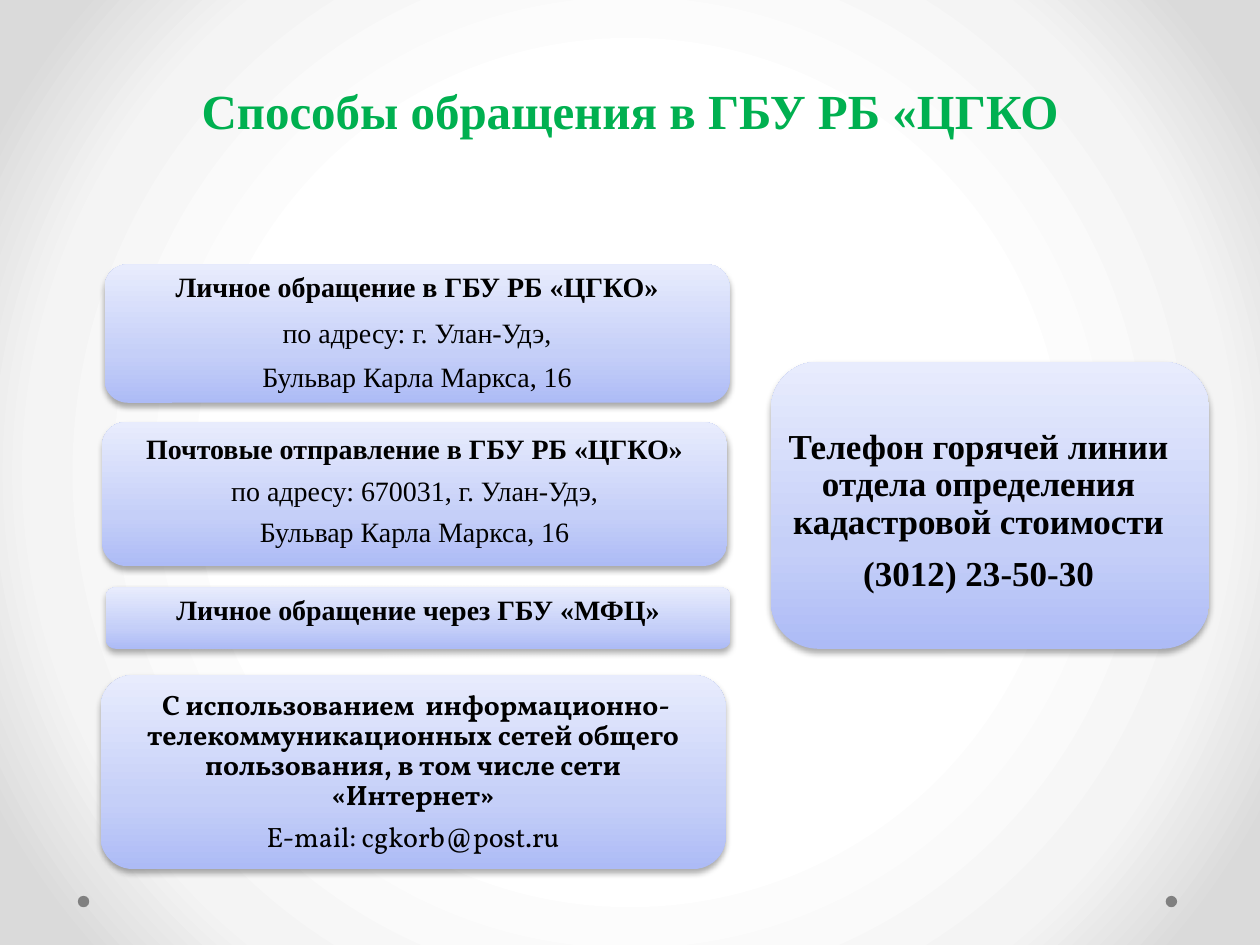
from lxml.etree import fromstring
from pptx import Presentation
from pptx.dml.color import RGBColor as Rgb
from pptx.enum.shapes import MSO_SHAPE as Shape
from pptx.enum.text import MSO_ANCHOR as Anchor, PP_ALIGN as Align
from pptx.oxml.ns import nsdecls
from pptx.util import Cm, Pt

COLORS = {
    "title": "00B050", "text": "000000", "dot": "808080", "shadow": "000000",
    "center": "FFFFFF", "ring": "F4F4F4", "edge": "DADADA",
    "box_bottom": "ADBBF6", "box_middle": "C5CFF8", "box_top": "E8ECFD",
}
SERIF = "Times New Roman"


def gradient(stops, direction):
    stop_list = "".join(
        f'<a:gs pos="{position * 1000}"><a:srgbClr val="{COLORS[name]}"/></a:gs>'
        for position, name in stops)
    return (f'<a:gradFill {nsdecls("a")} rotWithShape="1">'
            f'<a:gsLst>{stop_list}</a:gsLst>{direction}</a:gradFill>')


class ContactSlide:
    box_fill = gradient([(0, "box_bottom"), (35, "box_middle"), (100, "box_top")],
                        '<a:lin ang="16200000" scaled="1"/>')
    box_shadow = (
        f'<a:effectLst {nsdecls("a")}><a:outerShdw blurRad="{Pt(3.5)}" dist="{Pt(2.2)}" '
        f'dir="5400000" rotWithShape="0"><a:srgbClr val="{COLORS["shadow"]}">'
        '<a:alpha val="32000"/></a:srgbClr></a:outerShdw></a:effectLst>')

    def __init__(self, deck):
        self.slide = deck.slides.add_slide(deck.slide_layouts[6])

    def background(self):
        rings = gradient(
            [(50, "center"), (76, "ring"), (92, "edge")],
            '<a:path path="circle"><a:fillToRect l="50000" t="50000" r="50000" b="50000"/></a:path>')
        self.slide.element.cSld.insert(0, fromstring(
            f'<p:bg {nsdecls("p", "a")}><p:bgPr>{rings}<a:effectLst/></p:bgPr></p:bg>'))

    def dot(self, left, top, size):
        dot = self.slide.shapes.add_shape(Shape.OVAL, Cm(left), Cm(top), Cm(size), Cm(size))
        dot.shadow.inherit = False
        dot.fill.solid()
        dot.fill.fore_color.rgb = Rgb.from_string(COLORS["dot"])
        dot.line.fill.background()

    def style(self, paragraph, size, font, color, bold):
        paragraph.alignment = Align.CENTER
        paragraph.font.size = Pt(size)
        paragraph.font.name = font
        paragraph.font.bold = bold
        paragraph.font.color.rgb = Rgb.from_string(COLORS[color])

    def title(self, text, left, top, width, height):
        frame = self.slide.shapes.add_textbox(Cm(left), Cm(top), Cm(width), Cm(height)).text_frame
        frame.word_wrap = True
        frame.vertical_anchor = Anchor.MIDDLE
        frame.text = text
        self.style(frame.paragraphs[0], 28, SERIF, "title", True)

    def box(self, lines, left, top, width, height, size=16, font=SERIF,
            anchor=Anchor.TOP, insets=(0.25, 0.13, 0.25, 0.13), bold_lines=1, detail_spacing=0.9):
        box = self.slide.shapes.add_shape(
            Shape.ROUNDED_RECTANGLE, Cm(left), Cm(top), Cm(width), Cm(height))
        properties = box.element.spPr
        properties.append(fromstring(self.box_fill))
        box.line.fill.background()
        properties.append(fromstring(self.box_shadow))

        frame = box.text_frame
        frame.word_wrap = True
        frame.vertical_anchor = anchor
        frame.margin_left, frame.margin_top, frame.margin_right, frame.margin_bottom = map(Cm, insets)
        frame.text = "\n".join(lines)
        for index, paragraph in enumerate(frame.paragraphs):
            self.style(paragraph, size, font, "text", index < bold_lines)
            paragraph.line_spacing = detail_spacing if index else 0.9
            paragraph.space_after = Pt(size * 0.4)


def main():
    deck = Presentation()
    deck.slide_width, deck.slide_height = Cm(25.4), Cm(19.05)
    contacts = ContactSlide(deck)
    contacts.background()
    for left in (1.57, 23.5):
        contacts.dot(left, 18.06, 0.23)
    contacts.title("Способы обращения в ГБУ РБ «ЦГКО", 1.27, 0, 22.86, 4.45)

    contacts.box(["Телефон горячей линии отдела определения кадастровой стоимости",
                  "(3012) 23-50-30"],
                 15.54, 7.29, 8.84, 5.79, size=20, anchor=Anchor.MIDDLE,
                 insets=(0, 0.25, 0.46, 0), bold_lines=2)

    street = "Бульвар Карла Маркса, 16"
    width = 12.6
    contacts.box(["Личное обращение в ГБУ РБ «ЦГКО»", "по адресу: г. Улан-Удэ,", street],
                 2.11, 5.33, width, 2.79, anchor=Anchor.MIDDLE,
                 insets=(0.46, 0, 0.46, 0), detail_spacing=1.0)
    contacts.box(["Почтовые отправление в ГБУ РБ «ЦГКО»", "по адресу: 670031, г. Улан-Удэ,", street],
                 2.06, 8.51, width, 2.9)
    contacts.box(["Личное обращение через ГБУ «МФЦ»"], 2.13, 11.84, width, 1.24)
    contacts.box([" С использованием  информационно-телекоммуникационных сетей общего "
                  "пользования, в том числе сети «Интернет»",
                  "E-mail: cgkorb@post.ru"],
                 2.03, 13.61, width, 3.91, font="Vollkorn")
    deck.save("out.pptx")


if __name__ == "__main__":
    main()
